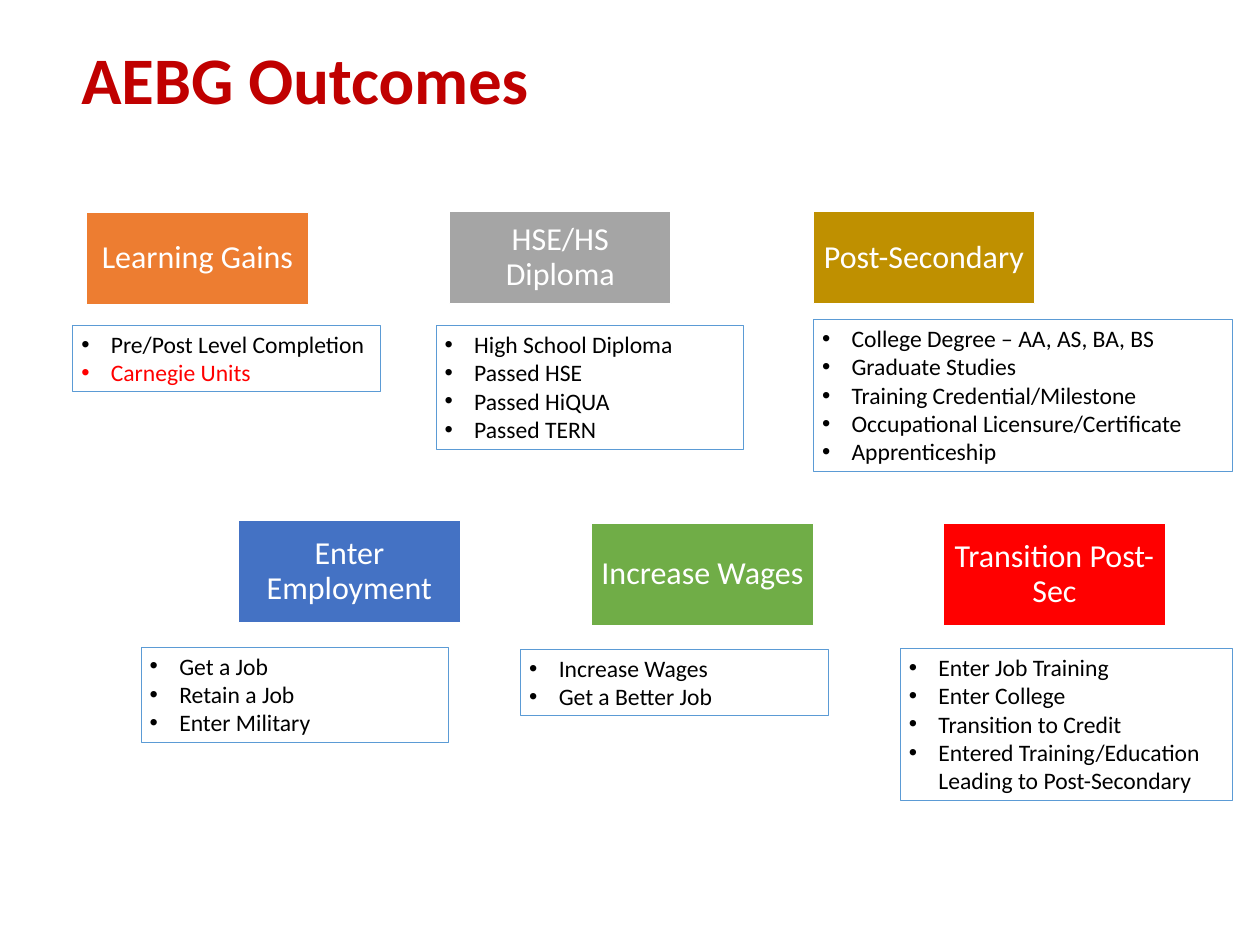
from pptx import Presentation
from pptx.dml.color import RGBColor
from pptx.enum.shapes import MSO_SHAPE
from pptx.enum.text import MSO_ANCHOR, MSO_AUTO_SIZE, PP_ALIGN
from pptx.oxml.ns import qn
from pptx.util import Pt
from lxml import etree

RECTANGLE = MSO_SHAPE.RECTANGLE
MIDDLE, TOP = MSO_ANCHOR.MIDDLE, MSO_ANCHOR.TOP
CENTER, LEFT = PP_ALIGN.CENTER, PP_ALIGN.LEFT
GROW = MSO_AUTO_SIZE.SHAPE_TO_FIT_TEXT

COLORS = {
    "title": "C00000", "white": "FFFFFF", "black": "000000", "border": "5B9BD5",
    "orange": "ED7D31", "gray": "A5A5A5", "gold": "BF9000",
    "blue": "4472C4", "green": "70AD47", "red": "FF0000",
}

HEADING_WIDTH = 180
LIST_WIDTH = 250
LINE_HEIGHT = 23.3
LIST_PADDING = 7.2
LIST_INDENT = 24

OUTCOMES = [
    ("Learning Gains", "orange", (70.6, 172.5, 75), (59, 264.4, LIST_WIDTH, 2),
     ["Pre/Post Level Completion", "Carnegie Units"]),
    ("HSE/HS Diploma", "gray", (365.4, 172, 75), (354.3, 264.6, LIST_WIDTH, 4),
     ["High School Diploma", "Passed HSE", "Passed HiQUA", "Passed TERN"]),
    ("Post-Secondary", "gold", (661, 172, 75), (661, 259.8, 340.6, 5),
     ["College Degree – AA, AS, BA, BS", "Graduate Studies",
      "Training Credential/Milestone", "Occupational Licensure/Certificate",
      "Apprenticeship"]),
    ("Enter Employment", "blue", (194, 423.2, 82.8), (114.6, 526, LIST_WIDTH, 3),
     ["Get a Job", "Retain a Job", "Enter Military"]),
    ("Increase Wages", "green", (481, 425.5, 82.8), (423, 527.9, LIST_WIDTH, 2),
     ["Increase Wages", "Get a Better Job"]),
    ("Transition Post-Sec", "red", (767, 425.5, 82.8), (731.6, 527, 270, 5),
     ["Enter Job Training", "Enter College", "Transition to Credit",
      "Entered Training/Education Leading to Post-Secondary"]),
]
HIGHLIGHTED = {"Carnegie Units": "red"}


class OutcomeSlide:
    """Holds the text style and the slide, and draws each kind of element."""

    def __init__(self, slide, font="Calibri"):
        self.slide = slide
        self.font = font

    def color(self, name):
        return RGBColor.from_string(COLORS[name])

    def add_text(self, paragraph, text, size, color, bold=False):
        run = paragraph.add_run()
        run.text = text
        run.font.name = self.font
        run.font.size = Pt(size)
        run.font.bold = bold
        run.font.color.rgb = self.color(color)

    def title(self, text, left, top, width, height):
        box = self.slide.shapes.add_textbox(Pt(left), Pt(top), Pt(width), Pt(height))
        frame = box.text_frame
        frame.word_wrap = True
        frame.vertical_anchor = MIDDLE
        frame.paragraphs[0].line_spacing = 0.9
        self.add_text(frame.paragraphs[0], text, 54, "title", bold=True)

    def rectangle(self, left, top, width, height, border, weight, fill=None):
        box = self.slide.shapes.add_shape(
            RECTANGLE, Pt(left), Pt(top), Pt(width), Pt(height))
        box.shadow.inherit = False
        if fill:
            box.fill.solid()
            box.fill.fore_color.rgb = self.color(fill)
        else:
            box.fill.background()
        box.line.color.rgb = self.color(border)
        box.line.width = Pt(weight)
        box.text_frame.word_wrap = True
        return box.text_frame

    def heading(self, text, fill, left, top, height):
        frame = self.rectangle(left, top, HEADING_WIDTH, height, "white", 1, fill)
        frame.vertical_anchor = MIDDLE
        frame.margin_left = frame.margin_right = Pt(7.8)
        frame.margin_top = frame.margin_bottom = Pt(7.8)
        paragraph = frame.paragraphs[0]
        paragraph.alignment = CENTER
        paragraph.line_spacing = 0.9
        self.add_text(paragraph, text, 26, "white")

    def bullets(self, items, left, top, width, lines):
        height = LIST_PADDING + LINE_HEIGHT * lines
        frame = self.rectangle(left, top, width, height, "border", 0.75)
        frame.vertical_anchor = TOP
        frame.auto_size = GROW
        for index, item in enumerate(items):
            paragraph = frame.add_paragraph() if index else frame.paragraphs[0]
            paragraph.alignment = LEFT
            properties = paragraph._p.get_or_add_pPr()
            properties.set("marL", str(Pt(LIST_INDENT)))
            properties.set("indent", str(-Pt(LIST_INDENT)))
            etree.SubElement(properties, qn("a:buFont"), typeface="Arial")
            etree.SubElement(properties, qn("a:buChar"), char="•")
            self.add_text(paragraph, item, 19.2, HIGHLIGHTED.get(item, "black"))


def main():
    presentation = Presentation()
    presentation.slide_width = Pt(1024)
    presentation.slide_height = Pt(768)
    outcomes = OutcomeSlide(presentation.slides.add_slide(presentation.slide_layouts[6]))
    for heading, fill, heading_place, list_place, items in OUTCOMES:
        outcomes.heading(heading, fill, *heading_place)
        outcomes.bullets(items, *list_place)
    outcomes.title("AEBG Outcomes", 59, 39.6, 883.4, 56.2)
    presentation.save("out.pptx")


if __name__ == "__main__":
    main()
